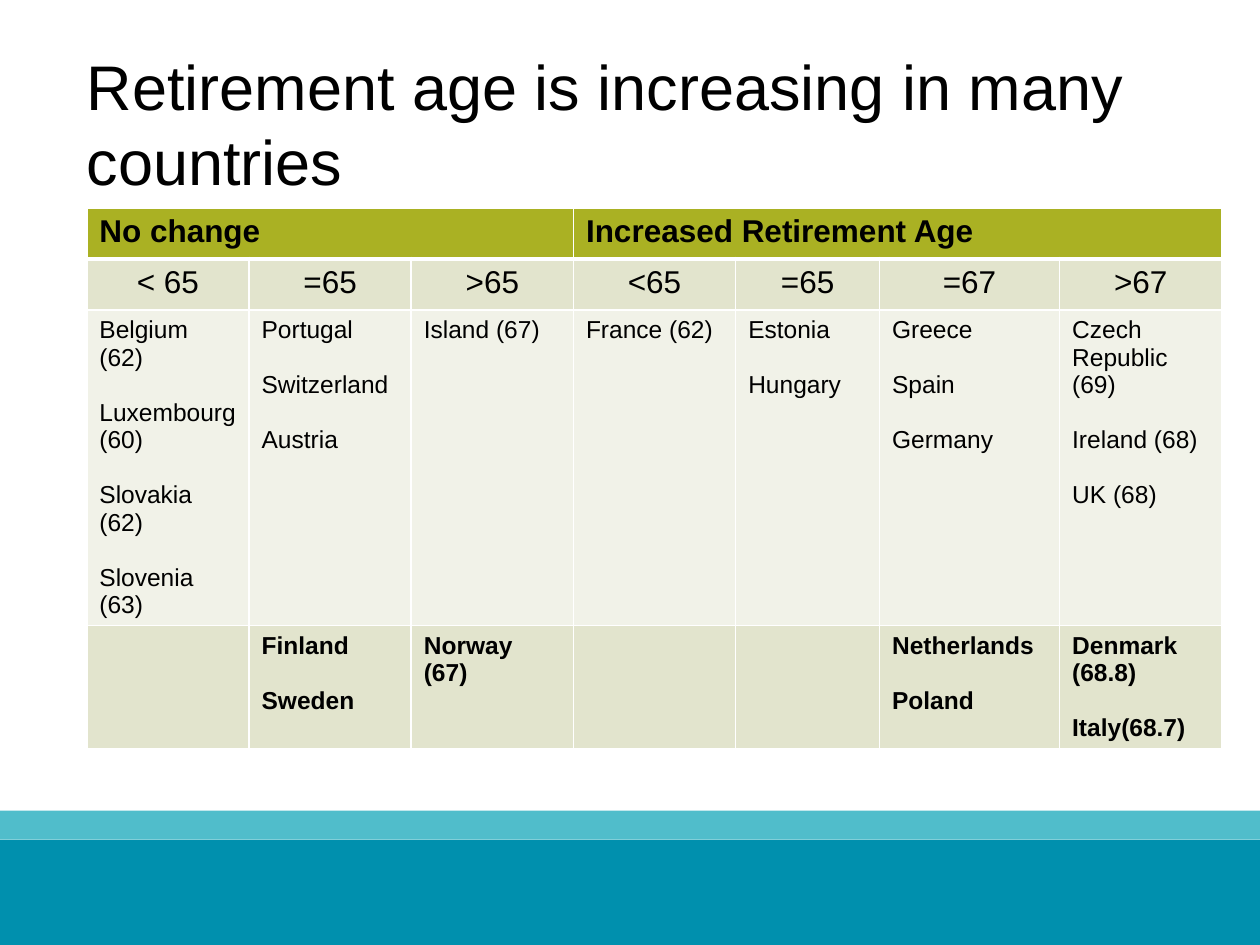
from lxml.etree import SubElement
from pptx import Presentation
from pptx.dml.color import RGBColor
from pptx.enum.shapes import MSO_SHAPE
from pptx.enum.text import MSO_ANCHOR, MSO_AUTO_SIZE, PP_ALIGN
from pptx.oxml.ns import qn
from pptx.util import Cm, Pt

OLIVE, SAGE, PALE = "AAB123", "E2E4CD", "F1F2E8"
COLUMN_WIDTHS = [3.27, 3.27, 3.27, 3.27, 2.9, 3.63, 3.27]
ROW_HEIGHTS = [1.03, 1.03, 6.36, 2.46]
HEADINGS = {0: ("No change", 2), 3: ("Increased Retirement Age", 6)}
AGES = ["< 65", "=65", ">65", "<65", "=65", "=67", ">67"]
COUNTRIES = [
    ["Belgium (62)", "Luxembourg (60)", "Slovakia (62)", "Slovenia (63)"],
    ["Portugal", "Switzerland", "Austria"],
    ["Island (67)"],
    ["France (62)"],
    ["Estonia", "Hungary"],
    ["Greece", "Spain", "Germany"],
    ["Czech Republic (69)", "Ireland (68)", "UK (68)"],
]
BOLD_COUNTRIES = [
    [],
    ["Finland", "Sweden"],
    ["Norway (67)"],
    [],
    [],
    ["Netherlands", "Poland"],
    ["Denmark (68.8)", "Italy(68.7)"],
]


def paint(fill, color):
    fill.solid()
    fill.fore_color.rgb = RGBColor.from_string(color)


def write(frame, lines, size=18, bold=False, align=PP_ALIGN.LEFT, gap=0, pitch=None):
    for index, line in enumerate(lines):
        para = frame.add_paragraph() if index else frame.paragraphs[0]
        para.alignment = align
        para.space_before = Pt(gap if index else 0)
        if pitch:
            para.line_spacing = Pt(pitch)
        span = para.add_run()
        span.text = line
        span.font.name = "Arial"
        span.font.size = Pt(size)
        span.font.bold = bold
        span.font.color.rgb = RGBColor.from_string("000000")


def add_band(slide, top, height, color):
    band = slide.shapes.add_shape(MSO_SHAPE.RECTANGLE, 0, Cm(top), Cm(25.4), Cm(height))
    band.shadow.inherit = False
    band.line.fill.background()
    paint(band.fill, color)


def add_title(slide, text):
    title = slide.shapes.title
    title.left, title.top, title.width, title.height = Cm(1.75), Cm(1.52), Cm(22.12), Cm(2.47)
    frame = title.text_frame
    frame.auto_size = MSO_AUTO_SIZE.NONE
    frame.word_wrap = True
    frame.vertical_anchor = MSO_ANCHOR.BOTTOM
    frame.margin_left = frame.margin_top = frame.margin_right = frame.margin_bottom = 0
    write(frame, [text], size=36, pitch=43)


def add_border(cell, side, width):
    line = SubElement(cell._tc.get_or_add_tcPr(), qn(f"a:ln{side}"), w=str(Pt(width)))
    SubElement(SubElement(line, qn("a:solidFill")), qn("a:srgbClr"), val="FFFFFF")


def add_table(slide):
    table = slide.shapes.add_table(
        len(ROW_HEIGHTS), len(COLUMN_WIDTHS), Cm(1.75), Cm(4.19),
        Cm(sum(COLUMN_WIDTHS)), Cm(sum(ROW_HEIGHTS)),
    ).table
    table.horz_banding = False
    for column, width in zip(table.columns, COLUMN_WIDTHS):
        column.width = Cm(width)
    for row, height in zip(table.rows, ROW_HEIGHTS):
        row.height = Cm(height)
    for row_index, color in enumerate([OLIVE, SAGE, PALE, SAGE]):
        for cell in table.rows[row_index].cells:
            for side in "LRTB":
                heavy = (row_index, side) in [(0, "B"), (1, "T")]
                add_border(cell, side, 3 if heavy else 1)
            paint(cell.fill, color)
    for start, (heading, end) in HEADINGS.items():
        table.cell(0, start).merge(table.cell(0, end))
        write(table.cell(0, start).text_frame, [heading], bold=True)
    for index, age in enumerate(AGES):
        write(table.cell(1, index).text_frame, [age], align=PP_ALIGN.CENTER)
        write(table.cell(2, index).text_frame, COUNTRIES[index], size=14, gap=15.7)
        write(table.cell(3, index).text_frame, BOLD_COUNTRIES[index], size=14, bold=True, gap=15.7)


def main():
    deck = Presentation()
    deck.slide_width, deck.slide_height = Cm(25.4), Cm(19.05)
    slide = deck.slides.add_slide(deck.slide_layouts[5])
    add_band(slide, 16.93, 2.12, "0090AE")
    add_band(slide, 16.34, 0.59, "50BDCB")
    add_title(slide, "Retirement age is increasing in many countries")
    add_table(slide)
    deck.save("out.pptx")


if __name__ == "__main__":
    main()
